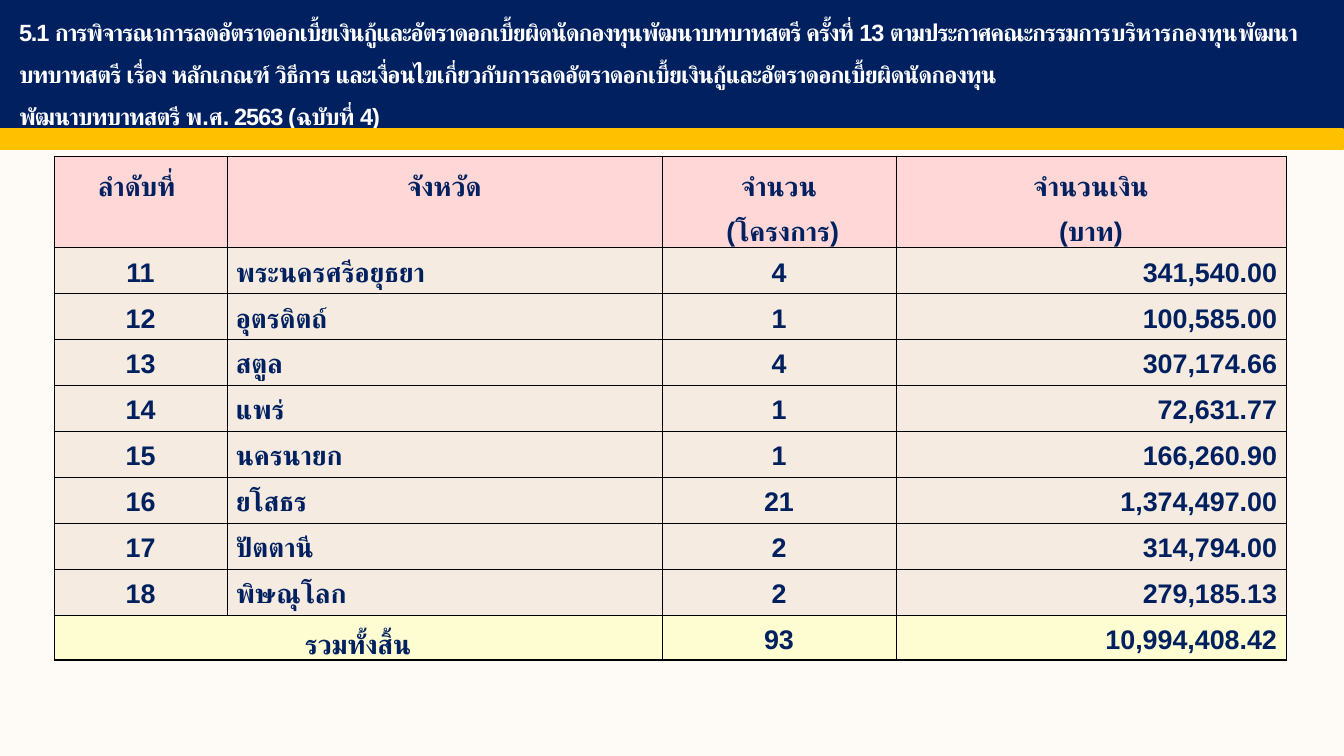
from dataclasses import dataclass

from lxml.etree import SubElement
from pptx import Presentation
from pptx.dml.color import RGBColor
from pptx.enum.shapes import MSO_SHAPE as Shape
from pptx.enum.text import MSO_ANCHOR as Anchor, MSO_AUTO_SIZE as AutoSize, PP_ALIGN as Align
from pptx.oxml.ns import qn
from pptx.util import Emu, Pt

SCALE = 914400 / 121


@dataclass(frozen=True)
class Theme:
    font: str = "Arial"
    navy: str = "002060"
    gold: str = "FFC000"
    white: str = "FFFFFF"
    paper: str = "FEFBF6"
    border: str = "000000"
    title_size: int = 14
    table_size: int = 16


@dataclass(frozen=True)
class Bar:
    top: int
    height: int
    color: str


@dataclass(frozen=True)
class Band:
    fill: str
    alpha: int
    margin_x: int
    margin_top: int
    spacing: float
    top: float = 0.5
    bottom: float = 0.5


@dataclass(frozen=True)
class TableRow:
    band: Band
    height: int
    texts: tuple[str, str, str, str]


THEME = Theme()
BANNER = Bar(0, 129, THEME.navy)
STRIPE = Bar(129, 20, THEME.gold)

HEAD_TOP = Band("FFC9C9", 70, 1, 1, 1.5, bottom=0)
HEAD_BOTTOM = Band("FFC9C9", 70, 1, 1, 1.5, top=0)
BODY = Band("F4E8DC", 80, 9, 0, 1.15)
TOTAL = Band("FFFEC8", 80, 9, 0, 1.15, bottom=1)

TITLE_RUNS = (
    ("5.1 การพิจารณาการลดอัตราดอกเบี้ยเงินกู้และอัตราดอกเบี้ยผิดนัดกองทุนพัฒนาบทบาทสตรี "
     "ครั้งที่ 13 ตามประกาศคณะกรรมการ", -0.7),
    ("บริหารกองทุน", -0.4),
    ("พัฒนาบทบาทสตรี เรื่อง หลักเกณฑ์ วิธีการ และเงื่อนไขเกี่ยวกับการลดอัตราดอกเบี้ยเงินกู้"
     "และอัตราดอกเบี้ยผิดนัดกองทุน\nพัฒนาบทบาทสตรี พ.ศ. 2563 (ฉบับที่ 4)", -0.6),
)

PROVINCES = (
    ("พระนครศรีอยุธยา", "4", "341,540.00"),
    ("อุตรดิตถ์", "1", "100,585.00"),
    ("สตูล", "4", "307,174.66"),
    ("แพร่", "1", "72,631.77"),
    ("นครนายก", "1", "166,260.90"),
    ("ยโสธร", "21", "1,374,497.00"),
    ("ปัตตานี", "2", "314,794.00"),
    ("พิษณุโลก", "2", "279,185.13"),
)
FIRST_NUMBER = 11

ROWS = (
    TableRow(HEAD_TOP, 44, ("ลำดับที่ ", "จังหวัด", "จำนวน", "จำนวนเงิน")),
    TableRow(HEAD_BOTTOM, 43, ("", "", " (โครงการ)", "(บาท)")),
    *(TableRow(BODY, 46, (str(n), *province)) for n, province in enumerate(PROVINCES, FIRST_NUMBER)),
    TableRow(TOTAL, 40, ("รวมทั้งสิ้น", "", "93", "10,994,408.42")),
)
COLUMN_WIDTHS = (173, 435, 234, 390)
BODY_ALIGNS = (Align.CENTER, Align.LEFT, Align.CENTER, Align.RIGHT)


def px(n: int) -> Emu:
    return Emu(round(n * SCALE))


def rgb(color: str) -> RGBColor:
    return RGBColor.from_string(color)


def add_text(p, text: str, *, size: int, color: str, spc: float = 0) -> None:
    for i, line in enumerate(text.split("\n")):
        if i:
            p.add_line_break()
        if not line:
            continue
        r = p.add_run()
        r.text = line
        r.font.name, r.font.size, r.font.bold = THEME.font, Pt(size), True
        r.font.color.rgb = rgb(color)
        rPr = r.font._element
        SubElement(rPr, qn("a:cs"), typeface=THEME.font)
        if spc:
            rPr.set("spc", str(round(spc * 100)))


def add_bar(s, bar: Bar):
    sp = s.shapes.add_shape(Shape.RECTANGLE, px(-1), px(bar.top), px(1344), px(bar.height))
    sp.shadow.inherit = False
    sp.fill.solid()
    sp.fill.fore_color.rgb = rgb(bar.color)
    sp.line.color.rgb = rgb(bar.color)
    sp.line.width = Pt(1)
    return sp


def format_title(title) -> None:
    title.left, title.top, title.width, title.height = px(1), px(7), px(1339), px(120)
    tf = title.text_frame
    tf.word_wrap, tf.auto_size, tf.vertical_anchor = True, AutoSize.NONE, Anchor.MIDDLE
    tf.margin_left = tf.margin_right = px(18)
    tf.margin_top = tf.margin_bottom = px(6)
    p = tf.paragraphs[0]
    p.alignment, p.line_spacing = Align.LEFT, 1.5
    for text, spc in TITLE_RUNS:
        add_text(p, text, size=THEME.title_size, color=THEME.white, spc=spc)


def set_borders(cell, band: Band) -> None:
    tcPr = cell._tc.get_or_add_tcPr()
    for side, width in (("L", 0.5), ("R", 0.5), ("T", band.top), ("B", band.bottom)):
        ln = SubElement(tcPr, qn(f"a:ln{side}"), w=str(Pt(width)))
        if width:
            SubElement(SubElement(ln, qn("a:solidFill")), qn("a:srgbClr"), val=THEME.border)
        else:
            SubElement(ln, qn("a:noFill"))


def format_cell(cell, text: str, band: Band, align: Align) -> None:
    set_borders(cell, band)
    cell.fill.solid()
    cell.fill.fore_color.rgb = rgb(band.fill)
    color = cell._tc.tcPr.find(qn("a:solidFill")).find(qn("a:srgbClr"))
    SubElement(color, qn("a:alpha"), val=str(band.alpha * 1000))
    cell.vertical_anchor = Anchor.MIDDLE
    cell.margin_left = cell.margin_right = px(band.margin_x)
    cell.margin_top, cell.margin_bottom = px(band.margin_top), 0
    if text:
        p = cell.text_frame.paragraphs[0]
        p.alignment, p.line_spacing = align, band.spacing
        if cell.is_merge_origin:
            p.line_spacing, p.space_after = 1.5, Pt(5)
        add_text(p, text, size=THEME.table_size, color=THEME.navy)


def add_province_table(s) -> None:
    frame = s.shapes.add_table(len(ROWS), len(COLUMN_WIDTHS), px(54), px(156),
                               px(sum(COLUMN_WIDTHS)), px(sum(row.height for row in ROWS)))
    table = frame.table
    table.first_row = table.horz_banding = False
    for column, width in zip(table.columns, COLUMN_WIDTHS):
        column.width = px(width)
    last = len(ROWS) - 1
    table.cell(last, 0).merge(table.cell(last, 1))
    for i, row in enumerate(ROWS):
        table.rows[i].height = px(row.height)
        is_head = row.band in (HEAD_TOP, HEAD_BOTTOM)
        for j, (text, align) in enumerate(zip(row.texts, BODY_ALIGNS)):
            format_cell(table.cell(i, j), text, row.band, Align.CENTER if is_head else align)


def main() -> None:
    prs = Presentation()
    prs.slide_width, prs.slide_height = px(1344), px(756)
    s = prs.slides.add_slide(prs.slide_layouts.get_by_name("Title Only"))
    s.background.fill.solid()
    s.background.fill.fore_color.rgb = rgb(THEME.paper)
    add_province_table(s)
    banner = add_bar(s, BANNER)
    title = s.shapes.title
    format_title(title)
    banner.element.addnext(title.element)
    add_bar(s, STRIPE)
    prs.save("out.pptx")


if __name__ == "__main__":
    main()
